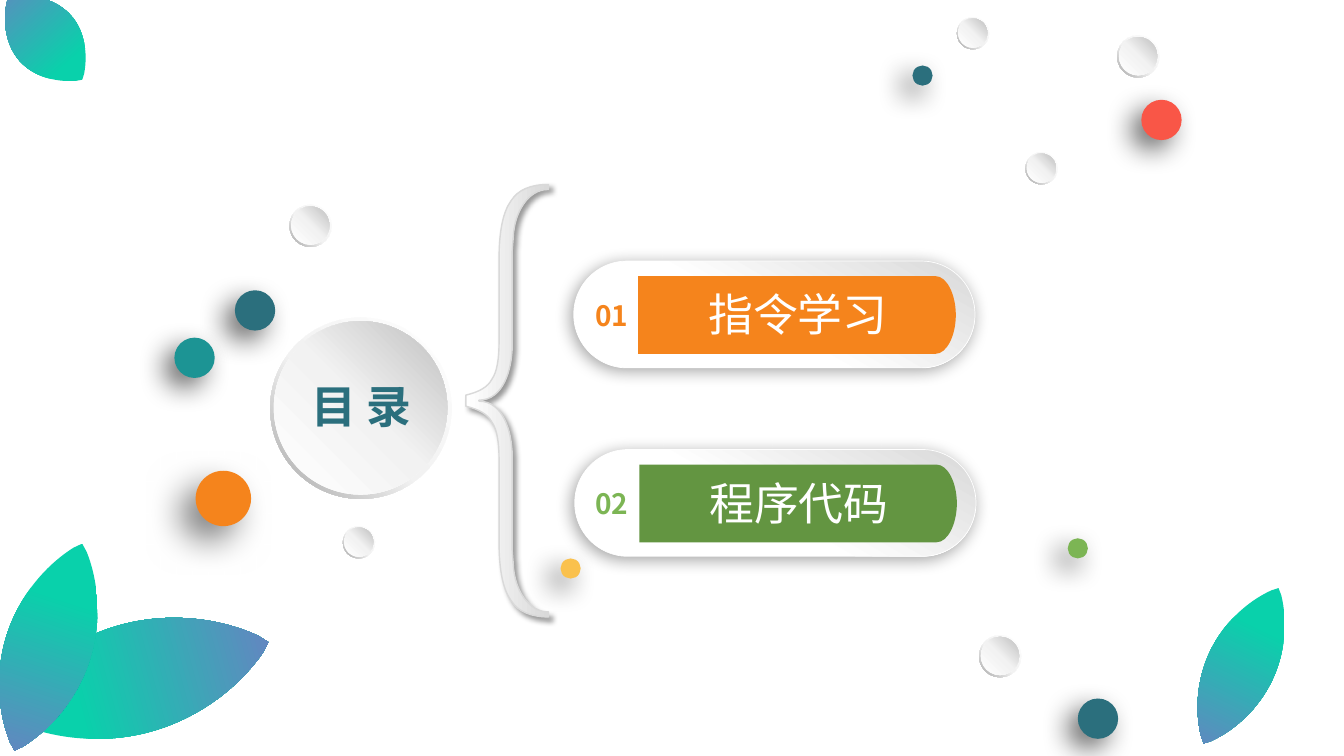
from lxml import etree
from pptx import Presentation
from pptx.dml.color import RGBColor
from pptx.enum.shapes import MSO_SHAPE
from pptx.enum.text import MSO_ANCHOR, MSO_AUTO_SIZE, PP_ALIGN
from pptx.oxml.ns import qn
from pptx.util import Inches, Pt

OVAL, RING, PILL = MSO_SHAPE.OVAL, MSO_SHAPE.DONUT, MSO_SHAPE.ROUNDED_RECTANGLE
CENTER, TOP, GROW = PP_ALIGN.CENTER, MSO_ANCHOR.TOP, MSO_AUTO_SIZE.SHAPE_TO_FIT_TEXT

FONT = "Noto Sans CJK SC"
WHITE = RGBColor(0xFF, 0xFF, 0xFF)
PALE = RGBColor(0xF2, 0xF2, 0xF2)
LIGHT_GREY = RGBColor(0xD9, 0xD9, 0xD9)
MID_GREY = RGBColor(0xBF, 0xBF, 0xBF)
DARK_GREY = RGBColor(0xA6, 0xA6, 0xA6)
BLACK = RGBColor(0, 0, 0)
PETROL = RGBColor(0x2B, 0x6F, 0x7D)
TEAL = RGBColor(0x1C, 0x94, 0x94)
ORANGE = RGBColor(0xF5, 0x84, 0x1C)
GREEN = RGBColor(0x63, 0x95, 0x41)
LIME = RGBColor(0x7C, 0xB5, 0x54)
YELLOW = RGBColor(0xFA, 0xC1, 0x4D)
RED = RGBColor(0xF9, 0x56, 0x47)
MINT = RGBColor(0x09, 0xD1, 0xAB)
VIOLET = RGBColor(0x6E, 0x7D, 0xC3)

# Gradient stops (percent, colour)
RIM = [(0, WHITE), (55, PALE), (100, DARK_GREY)]
CORE = [(0, WHITE), (51, PALE), (100, MID_GREY)]
BRACE = [(0, WHITE), (100, LIGHT_GREY)]
CAPSULE = [(45, WHITE), (100, LIGHT_GREY)]
LEAF = [(0, MINT), (31, MINT), (100, VIOLET)]

# Shadows: opacity percent, blur, distance, direction
DOT_SHADOW = (60, 20, 10, 135)
LARGE_DOT_SHADOW = (50, 25, 15, 135)
BRACE_SHADOW = (40, 4, 3, 45)
CAPSULE_SHADOW = (34, 12, 3, 135)

# Agenda rows
ROW_LEFT, ROW_TOP, ROW_PITCH, ROW_SHIFT = 5.69, 2.59, 1.87, 0.01
BRACE_AXIS = 3.975


def style(shape, fill, angle=0, line=None, shadow=None):
    """Fill with a colour or with gradient stops; line is (colour, width)."""
    properties = shape._element.spPr
    if isinstance(fill, RGBColor):
        shape.fill.solid()
        shape.fill.fore_color.rgb = fill
    else:
        shape.fill.background()
        gradient = etree.Element(qn("a:gradFill"), rotWithShape="1")
        stops = etree.SubElement(gradient, qn("a:gsLst"))
        for percent, color in fill:
            stop = etree.SubElement(stops, qn("a:gs"), pos=str(percent * 1000))
            etree.SubElement(stop, qn("a:srgbClr"), val=str(color))
        etree.SubElement(gradient, qn("a:lin"), ang=str(angle * 60000), scaled="0")
        properties.replace(properties.find(qn("a:noFill")), gradient)
    if line:
        shape.line.color.rgb, shape.line.width = line[0], Pt(line[1])
    else:
        shape.line.fill.background()
    shape.shadow.inherit = False
    if shadow:
        opacity, blur, distance, direction = shadow
        outer = etree.SubElement(
            properties.find(qn("a:effectLst")), qn("a:outerShdw"),
            blurRad=str(Pt(blur)), dist=str(Pt(distance)),
            dir=str(direction * 60000), algn="ctr", rotWithShape="0")
        color = etree.SubElement(outer, qn("a:srgbClr"), val=str(BLACK))
        etree.SubElement(color, qn("a:alpha"), val=str(opacity * 1000))


def add_preset(slide, kind, left, top, width, height, *look, **options):
    shape = slide.shapes.add_shape(
        kind, Inches(left), Inches(top), Inches(width), Inches(height))
    style(shape, *look, **options)
    return shape


def mirrored(segments, flip):
    """The segments run backwards, with every point flipped."""
    points = [flip(*point) for segment in reversed(segments) for point in reversed(segment)]
    result = [points[:1]]
    start = 1
    for segment in reversed(segments[1:]):
        result.append(points[start:start + len(segment)])
        start += len(segment)
    return result


def add_outline(slide, segments, *look, **options):
    """A segment of one point is a line, one of three points a Bezier curve."""
    corners = [(Inches(x), Inches(y)) for x, y in (segment[-1] for segment in segments)]
    builder = slide.shapes.build_freeform(*corners[0], scale=1.0)
    builder.add_line_segments(corners[1:], close=True)
    shape = builder.convert_to_shape()
    lines = list(shape._element.iter(qn("a:lnTo")))
    for line, segment in zip(lines, segments[1:]):
        if len(segment) == 3:
            curve = etree.Element(qn("a:cubicBezTo"))
            for x, y in segment:
                etree.SubElement(curve, qn("a:pt"), x=str(Inches(x) - shape.left),
                                 y=str(Inches(y) - shape.top))
            line.getparent().replace(line, curve)
    style(shape, *look, **options)
    return shape


def add_leaf(slide, left, top, width, height, rotation, angle=90):
    quarter = [[(0.5, 0)], [(0.42, 0.03)], [(0.17, 0.15), (0, 0.32), (0, 0.5)]]
    side = quarter + mirrored(quarter, lambda x, y: (x, 1 - y))[1:]
    outline = side + mirrored(side, lambda x, y: (1 - x, y))[1:]
    segments = [[(left + x * width, top + y * height) for x, y in segment]
                for segment in outline]
    add_outline(slide, segments, LEAF, angle).rotation = rotation


def add_brace(slide):
    upper = [
        [(4.62, 3.92)],
        [(4.75, 3.89), (4.84, 3.84), (4.88, 3.76)],
        [(4.93, 3.69), (4.95, 3.56), (4.95, 3.38)],
        [(4.95, 2.57)],
        [(4.95, 2.29), (4.99, 2.1), (5.07, 1.99)],
        [(5.14, 1.88), (5.27, 1.83), (5.44, 1.83)],
        [(5.44, 1.88)], [(5.43, 1.88)],
        [(5.25, 1.88), (5.1, 2.09), (5.09, 2.36)],
        [(5.08, 2.49)], [(5.08, 3.42)],
        [(5.08, 3.67), (4.99, 3.97), (4.75, 3.97)]]
    lower = mirrored(upper, lambda x, y: (x, 2 * BRACE_AXIS - y))
    add_outline(slide, upper + lower, BRACE, 0,
                line=(LIGHT_GREY, 1), shadow=BRACE_SHADOW)


def add_bubble(slide, left, top, size, core=0.905):
    """A shaded rim with a lighter disc inside it."""
    ring = add_preset(slide, RING, left, top, size, size, RIM, 135)
    ring.adjustments[0] = 0.049
    inset = (1 - core) * size * 0.45
    add_preset(slide, OVAL, left + inset, top + inset,
               size * core, size * core, CORE, 315)


def write(shape, text, size, color, bold=False):
    frame = shape.text_frame
    frame.text = text
    frame.vertical_anchor, frame.auto_size = TOP, GROW
    paragraph = frame.paragraphs[0]
    paragraph.alignment = CENTER
    font = paragraph.font
    font.name, font.size, font.bold = FONT, Pt(size), bold
    font.color.rgb = color
    etree.SubElement(font._element, qn("a:ea"), typeface=FONT)
    return frame


def add_label(slide, left, top, width, height, *content, wrap=True, bold=False):
    box = slide.shapes.add_textbox(
        Inches(left), Inches(top), Inches(width), Inches(height))
    write(box, *content, bold=bold).word_wrap = wrap


def add_agenda_row(slide, index, text, banner_color, number_color):
    left, top = ROW_LEFT + index * ROW_SHIFT, ROW_TOP + index * ROW_PITCH
    capsule = add_preset(slide, PILL, left, top, 3.98, 1.06, CAPSULE, 300,
                         line=(WHITE, 0.5), shadow=CAPSULE_SHADOW)
    capsule.adjustments[0] = 0.5
    start, end, head, foot = left + 0.64, left + 3.79, top + 0.15, top + 0.92
    middle = (head + foot) / 2
    upper = [[(start, head)], [(end - 0.2, head)],
             [(end - 0.09, head), (end, head + 0.18), (end, middle)]]
    lower = mirrored(upper, lambda x, y: (x, 2 * middle - y))[1:]
    add_outline(slide, upper + lower, banner_color)
    add_label(slide, ROW_LEFT + 0.11, top + 0.32, 0.54, 0.44,
              f"{index + 1:02d}", 20, number_color, wrap=False, bold=True)
    add_label(slide, left + 1.12, top + 0.21, 2.21, 0.64, text, 32, WHITE)


def place_title(slide, text):
    title = slide.shapes.title
    title.left, title.top = Inches(2.8), Inches(3.76)
    title.width, title.height = Inches(1.57), Inches(0.54)
    frame = write(title, text, 32, PETROL, bold=True)
    frame.margin_left = frame.margin_right = frame.margin_top = frame.margin_bottom = 0
    slide.shapes._spTree.append(title._element)  # in front of the disc


def main():
    presentation = Presentation()
    presentation.slide_width, presentation.slide_height = Inches(13.33), Inches(7.5)
    slide = presentation.slides.add_slide(presentation.slide_layouts[5])

    # Title disc, brace and agenda
    add_bubble(slide, 2.68, 3.15, 1.8, core=0.956)
    place_title(slide, "目 录")
    add_brace(slide)
    add_agenda_row(slide, 0, "指令学习", ORANGE, ORANGE)
    add_agenda_row(slide, 1, "程序代码", GREEN, LIME)

    # Corner leaves
    add_leaf(slide, 0.79, 5.36, 1.1, 2.74, 74.8, angle=270)
    add_leaf(slide, 0.05, 5.34, 0.86, 2.16, 18.1)
    add_leaf(slide, 11.97, 5.75, 0.68, 1.71, 25.7)
    add_leaf(slide, 0.11, -0.17, 0.68, 1.1, 138.3)

    # Scattered bubbles and coloured dots
    for left, top, size in [
            (9.49, 0.17, 0.32), (11.08, 0.35, 0.42), (3.4, 5.22, 0.32),
            (10.17, 1.51, 0.32), (9.71, 6.3, 0.42), (2.87, 2.03, 0.42)]:
        add_bubble(slide, left, top, size)
    for left, top, size, color in [
            (11.32, 0.99, 0.4, RED), (9.05, 0.65, 0.2, PETROL),
            (2.33, 2.88, 0.4, PETROL), (5.56, 5.54, 0.2, YELLOW),
            (10.69, 6.93, 0.4, PETROL), (1.73, 3.35, 0.4, TEAL),
            (10.59, 5.34, 0.2, LIME)]:
        add_preset(slide, OVAL, left, top, size, size, color, shadow=DOT_SHADOW)
    add_preset(slide, OVAL, 1.94, 4.67, 0.55, 0.55, ORANGE, shadow=LARGE_DOT_SHADOW)

    presentation.save("out.pptx")


if __name__ == "__main__":
    main()
